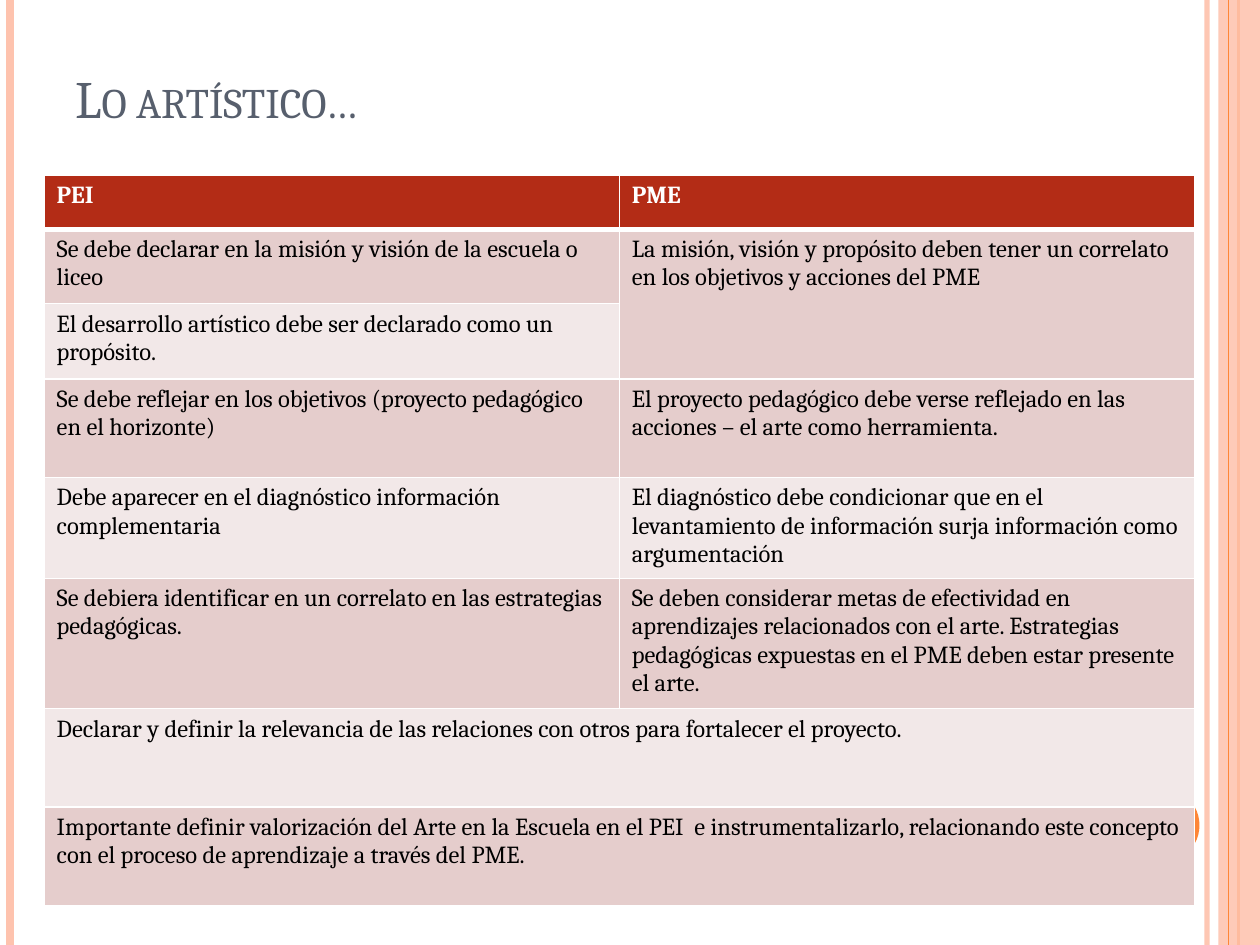
import lxml.etree
import pptx
import pptx.dml.color
import pptx.enum.shapes
import pptx.enum.text
import pptx.oxml.ns
import pptx.util
from pptx.util import Inches

THEME = {
    "font": "Cambria", "title size": 30, "table size": 14,
    "title": "575F6D", "text": "000000", "white": "FFFFFF",
    "header": "B32C16", "bands": ["E5CDCC", "F2E8E8"],
    "orange": "FE8637", "peach": "FEC3AE",
}
qn = pptx.oxml.ns.qn


def set_color(fill, color, opacity=None):
    """Fill with a solid colour, with opacity in percent if given."""
    fill.solid()
    fill.fore_color.rgb = pptx.dml.color.RGBColor.from_string(color)
    if opacity:
        node = next(fill._xPr.iter(qn("a:srgbClr")))
        lxml.etree.SubElement(node, qn("a:alpha"), val=str(opacity * 1000))


def write(frame, text, size, color, **formats):
    span = frame.paragraphs[0].add_run()
    span.text = text
    values = {"name": THEME["font"], "size": pptx.util.Pt(size), **formats}
    for name, value in values.items():
        setattr(span.font, name, value)
    set_color(span.font.fill, color)
    return span


deck = pptx.Presentation()
deck.slide_width, deck.slide_height = Inches(10), Inches(7.5)
page = deck.slides.add_slide(deck.slide_layouts[6])
shapes = page.shapes

# Side stripes; the translucent band lies between the last two lines
kinds = pptx.enum.shapes.MSO_SHAPE
stripes = [
    (9.58, 3, "peach", 93),
    (0.08, 4.5, "peach", None),
    (9.83, 1.5, "orange", None),
    (9.75, 0.75, "orange", None),
]
for x, width, color, opacity in stripes:
    if x == 9.75:
        band = shapes.add_shape(kinds.RECTANGLE, Inches(9.67), 0, Inches(0.33), Inches(7.5))
        set_color(band.fill, THEME["peach"], 87)
    stripe = shapes.add_connector(
        pptx.enum.shapes.MSO_CONNECTOR.STRAIGHT, Inches(x), 0, Inches(x), Inches(7.5))
    stripe.line.width = pptx.util.Pt(width)
    set_color(stripe.line.fill, THEME[color], opacity)
    lxml.etree.SubElement(stripe._element.spPr, qn("a:effectLst"))

disc = shapes.add_shape(kinds.OVAL, Inches(8.92), Inches(6.25), Inches(0.6), Inches(0.6))
set_color(disc.fill, THEME["orange"])
for shape in (band, disc):
    shape.shadow.inherit = False
    shape.line.fill.background()

title = shapes.add_textbox(Inches(0.5), Inches(0.3), Inches(8.17), Inches(0.77))
title.text_frame.word_wrap = True
title.text_frame.vertical_anchor = pptx.enum.text.MSO_ANCHOR.BOTTOM
span = write(title.text_frame, "Lo artístico…", THEME["title size"], THEME["title"])
span.font._element.set("cap", "small")

# None marks a cell covered by a merged neighbour
rows = [
    (0.43, "PEI", "PME"),
    (0.59, "Se debe declarar en la misión y visión de la escuela o liceo",
     "La misión, visión y propósito deben tener un correlato en los objetivos y acciones del PME"),
    (0.6, "El desarrollo artístico debe ser declarado como un propósito.", None),
    (0.78, "Se debe reflejar en los objetivos (proyecto pedagógico en el horizonte)",
     "El proyecto pedagógico debe verse reflejado en las acciones – el arte como herramienta."),
    (0.78, "Debe aparecer en el diagnóstico información complementaria",
     "El diagnóstico debe condicionar que en el levantamiento de información surja "
     "información como argumentación"),
    (0.78, "Se debiera identificar en un correlato en las estrategias pedagógicas.",
     "Se deben considerar metas de efectividad en aprendizajes relacionados con el arte. "
     "Estrategias pedagógicas expuestas en el PME deben estar presente el arte."),
    (0.78, "Declarar y definir la relevancia de las relaciones con otros para fortalecer "
     "el proyecto.", None),
    (0.78, "Importante definir valorización del Arte en la Escuela en el PEI  e "
     "instrumentalizarlo, relacionando este concepto con el proceso de aprendizaje "
     "a través del PME.", None),
]
height = sum(row[0] for row in rows)
table = shapes.add_table(
    len(rows), 2, Inches(0.35), Inches(1.39), Inches(9.13), Inches(height)).table
for column in table.columns:
    column.width = Inches(4.565)

for first, last in [((1, 1), (2, 1)), ((6, 0), (6, 1)), ((7, 0), (7, 1))]:
    table.cell(*first).merge(table.cell(*last))

for r, (row_height, *texts) in enumerate(rows):
    table.rows[r].height = Inches(row_height)
    header = r == 0
    for c, text in enumerate(texts):
        cell = table.cell(r, c)
        set_color(cell.fill, THEME["header"] if header else THEME["bands"][(r - 1) % 2])
        if text:
            write(cell.text_frame, text, THEME["table size"],
                  THEME["white" if header else "text"], bold=header)
        properties = cell._tc.get_or_add_tcPr()
        for i, side in enumerate("LRTB"):
            thick = (r, side) in [(0, "B"), (1, "T")]
            width = pptx.util.Pt(3 if thick else 1)
            border = lxml.etree.Element(qn("a:ln" + side), w=str(width))
            fill = lxml.etree.SubElement(border, qn("a:solidFill"))
            lxml.etree.SubElement(fill, qn("a:srgbClr"), val=THEME["white"])
            properties.insert(i, border)

deck.save("out.pptx")
